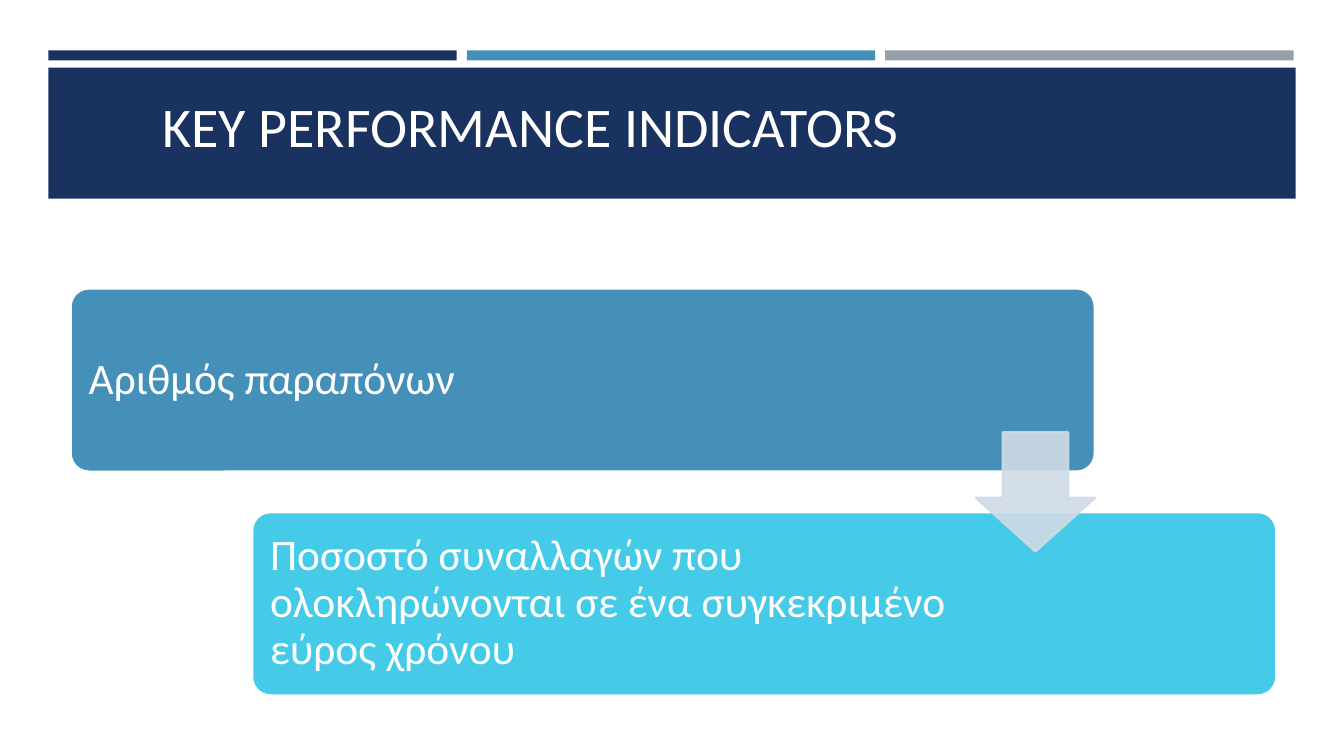
from dataclasses import dataclass

from lxml.etree import SubElement
from pptx import Presentation
from pptx.dml.color import RGBColor as Rgb
from pptx.enum.shapes import MSO_SHAPE as Kind
from pptx.enum.text import MSO_ANCHOR as Anchor, PP_ALIGN as Align
from pptx.oxml.ns import qn
from pptx.util import Pt

PX = 9144


@dataclass(frozen=True)
class Theme:
    """Colours and type sizes of the slide."""
    white: str = "FFFFFF"
    navy: str = "1A3260"
    blue: str = "4590B8"
    gray: str = "969FA7"
    cyan: str = "45CBE8"
    pale: str = "CFDBE6"
    font: str = "Calibri"
    head: int = 40
    body: int = 31
    edge: float = 1.75


LOOK = Theme()
STEPS = (
    ("Αριθμός παραπόνων", LOOK.blue, 828),
    ("Ποσοστό συναλλαγών που ολοκληρώνονται σε ένα συγκεκριμένο εύρος χρόνου",
     LOOK.cyan, 708),
)


def scale(*box):
    """Turn px lengths into EMU."""
    return [n * PX for n in box]


def apply(item, form):
    """Set each attribute named in the dict."""
    for name, val in form.items():
        setattr(item, name, val)


def draw(shapes, kind, box, tint, edge=None, adj=()):
    """Add a flat filled shape, with an outline if one is given."""
    shape = shapes.add_shape(kind, *scale(*box))
    shape.shadow.inherit = False
    shape.fill.solid()
    shape.fill.fore_color.rgb = Rgb.from_string(tint)
    if edge:
        shape.line.color.rgb = Rgb.from_string(edge)
        shape.line.width = Pt(LOOK.edge)
    else:
        shape.line.fill.background()
    for i, val in enumerate(adj):
        shape.adjustments[i] = val
    return shape


def write(shape, text, size, frame, para):
    """Put one formatted paragraph in a shape."""
    area = shape.text_frame
    apply(area, {"word_wrap": True, "vertical_anchor": Anchor.MIDDLE, **frame})
    line = area.paragraphs[0]
    apply(line, {"alignment": Align.LEFT, **para})
    run = line.add_run()
    run.text = text
    apply(run.font, {"name": LOOK.font, "size": Pt(size)})
    run.font.color.rgb = Rgb.from_string(LOOK.white)


def header(slide, box):
    """Draw the three strips, the band and the title."""
    x, y, w, h = box
    gap, top = 10, 17
    wide = (w - 2 * gap) // 3
    for i, tint in enumerate((LOOK.navy, LOOK.blue, LOOK.gray)):
        spot = (x + i * (wide + gap), y, wide, 10)
        draw(slide.shapes, Kind.RECTANGLE, spot, tint)
    draw(slide.shapes, Kind.RECTANGLE, (x, y + top, w, h - top), LOOK.navy)
    title = slide.shapes.title
    spot = scale(x + 103, y - 12, 1063, 172)
    apply(title, dict(zip(("left", "top", "width", "height"), spot)))
    write(title, "KEY PERFORMANCE INDICATORS", LOOK.head, {}, {})
    slide.shapes.element.append(title.element)


def card(shapes, box, text, tint, wide):
    """Draw a rounded card with its text area."""
    x, y, w, h = box
    draw(shapes, Kind.ROUNDED_RECTANGLE, box, tint, LOOK.white, (0.1,))
    note = shapes.add_textbox(*scale(x + 5, y + 5, wide, h - 10))
    pads = {f"margin_{side}": 13 * PX
            for side in ("left", "right", "top", "bottom")}
    write(note, text, LOOK.body, pads, {"line_spacing": 0.9})


def arrow(shapes, box):
    """Draw the translucent arrow between the cards."""
    shape = draw(shapes, Kind.DOWN_ARROW, box, LOOK.pale, LOOK.pale,
                 (0.55, 0.45))
    for tone in shape.element.spPr.iter(qn("a:srgbClr")):
        SubElement(tone, qn("a:alpha"), val="90000")


def steps(slide, box):
    """Place the staggered cards and the arrow in the box."""
    x, y, w, h = box
    wide, tall, size = 1016, 182, 118
    group = slide.shapes.add_group_shape().shapes
    for i, (text, tint, span) in enumerate(STEPS):
        spot = (x + i * (w - wide), y + i * (h - tall), wide, tall)
        card(group, spot, text, tint, span)
    arrow(group, (x + wide - size, y + 143, size, size))


def main():
    """Build the slide and save it."""
    deck = Presentation()
    apply(deck, {"slide_width": 1333 * PX, "slide_height": 750 * PX})
    slide = deck.slides.add_slide(deck.slide_layouts[5])
    header(slide, (48, 50, 1237, 147))
    steps(slide, (70, 286, 1196, 404))
    deck.save("out.pptx")


if __name__ == "__main__":
    main()
